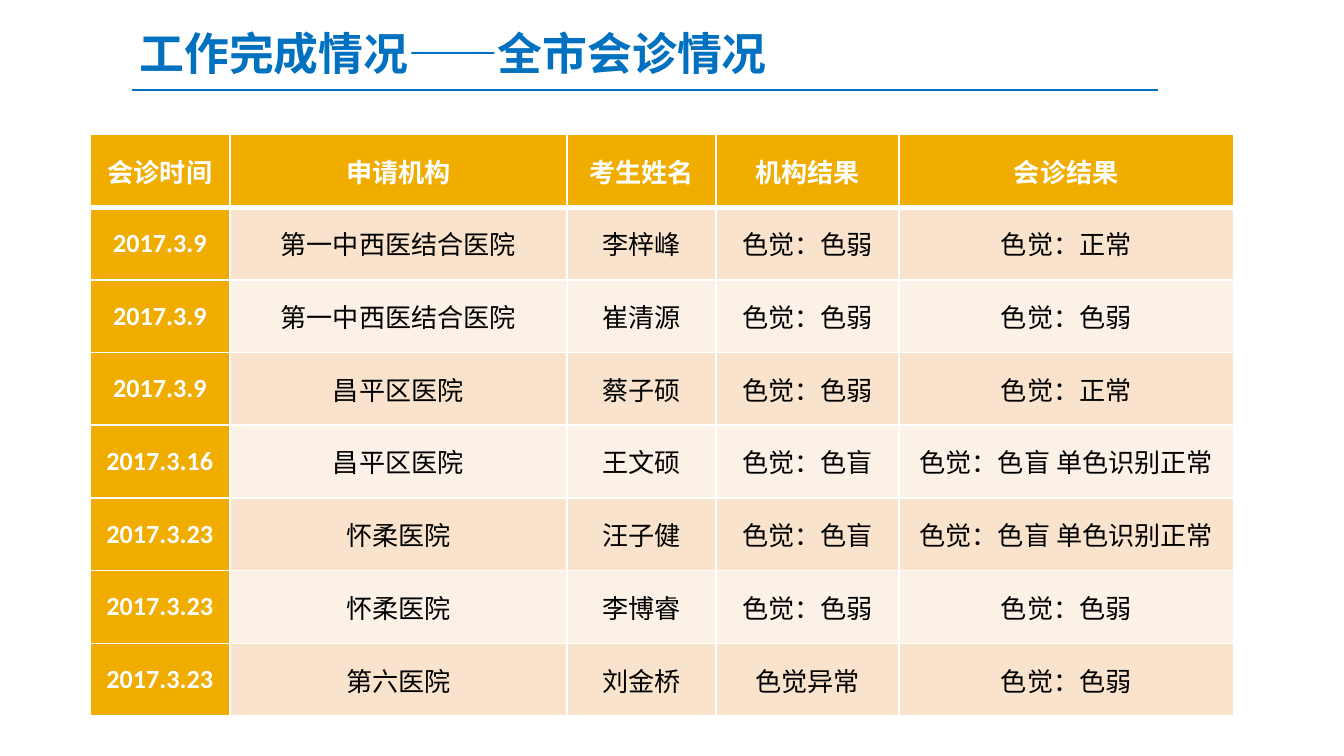
from lxml import etree
from pptx import Presentation
from pptx.dml.color import RGBColor
from pptx.enum.shapes import MSO_CONNECTOR
from pptx.enum.text import MSO_ANCHOR, MSO_AUTO_SIZE, PP_ALIGN
from pptx.oxml.ns import qn
from pptx.util import Inches, Pt

STRAIGHT = MSO_CONNECTOR.STRAIGHT
MIDDLE = MSO_ANCHOR.MIDDLE
CENTER = PP_ALIGN.CENTER
GROW = MSO_AUTO_SIZE.SHAPE_TO_FIT_TEXT

BLUE, GOLD, WHITE, BLACK = "0070C0", "F0AD00", "FFFFFF", "000000"
BANDS = ["F9E3CC", "FCF1E7"]
TITLE_FONT, TABLE_FONT = "Noto Sans CJK SC", "Calibri"

COLUMN_WIDTHS = [1.04, 2.51, 1.11, 1.36, 2.49]
TABLE_HEIGHT = 4.33
CONSULTATIONS = [
    ["会诊时间", "申请机构", "考生姓名", "机构结果", "会诊结果"],
    ["2017.3.9", "第一中西医结合医院", "李梓峰", "色觉：色弱", "色觉：正常"],
    ["2017.3.9", "第一中西医结合医院", "崔清源", "色觉：色弱", "色觉：色弱"],
    ["2017.3.9", "昌平区医院", "蔡子硕", "色觉：色弱", "色觉：正常"],
    ["2017.3.16", "昌平区医院", "王文硕", "色觉：色盲", "色觉：色盲 单色识别正常"],
    ["2017.3.23", "怀柔医院", "汪子健", "色觉：色盲", "色觉：色盲 单色识别正常"],
    ["2017.3.23", "怀柔医院", "李博睿", "色觉：色弱", "色觉：色弱"],
    ["2017.3.23", "第六医院", "刘金桥", "色觉异常", "色觉：色弱"],
]


def color(value):
    """Turn a hex string into a colour."""
    return RGBColor.from_string(value)


class SlideBuilder:
    """Holds the style and the current slide."""

    def __init__(self, slide):
        """Start on a slide."""
        self.slide = slide

    def run(self, paragraph, text, size, font, fill, bold):
        """Add one styled run."""
        run = paragraph.add_run()
        run.text = text
        run.font.size = Pt(size)
        run.font.name = font
        run.font.bold = bold
        run.font.color.rgb = color(fill)
        return run

    def rule(self, left, right, top):
        """Draw the horizontal line under the title."""
        line = self.slide.shapes.add_connector(
            STRAIGHT, Inches(left), Inches(top), Inches(right), Inches(top))
        line.line.color.rgb = color(BLUE)
        line.line.width = Pt(1.5)
        etree.SubElement(line._element.spPr, qn("a:effectLst"))

    def title(self, text, left, top, width, height):
        """Add the title text."""
        shape = self.slide.shapes.add_textbox(
            Inches(left), Inches(top), Inches(width), Inches(height))
        shape.text_frame.word_wrap = False
        shape.text_frame.auto_size = GROW
        paragraph = shape.text_frame.paragraphs[0]
        paragraph.line_spacing = 1.2
        run = self.run(paragraph, text, 24, TITLE_FONT, BLUE, True)
        east_asian = etree.SubElement(run.font._element, qn("a:ea"))
        east_asian.set("typeface", TITLE_FONT)

    def border(self, cell, side, width):
        """Draw one white cell border."""
        line = etree.SubElement(cell._tc.get_or_add_tcPr(), qn(f"a:ln{side}"))
        line.set("w", str(Pt(width)))
        fill = etree.SubElement(line, qn("a:solidFill"))
        etree.SubElement(fill, qn("a:srgbClr")).set("val", WHITE)

    def cell(self, cell, text, row, column):
        """Fill one table cell according to its place."""
        heading = row == 0 or column == 0
        cell.vertical_anchor = MIDDLE
        cell.margin_left = cell.margin_right = Inches(0.06)
        cell.margin_top = cell.margin_bottom = 0
        widths = {"L": 1, "R": 1, "T": 3 if row == 1 else 1, "B": 3 if row == 0 else 1}
        for side, width in widths.items():
            self.border(cell, side, width)
        cell.fill.solid()
        cell.fill.fore_color.rgb = color(GOLD if heading else BANDS[(row - 1) % 2])
        paragraph = cell.text_frame.paragraphs[0]
        paragraph.alignment = CENTER
        self.run(paragraph, text, 14, TABLE_FONT, WHITE if heading else BLACK, heading)

    def table(self, rows, left, top):
        """Add the table with its column widths and equal rows."""
        table = self.slide.shapes.add_table(
            len(rows), len(COLUMN_WIDTHS), Inches(left), Inches(top),
            Inches(sum(COLUMN_WIDTHS)), Inches(TABLE_HEIGHT)).table
        for column, width in zip(table.columns, COLUMN_WIDTHS):
            column.width = Inches(width)
        for row, texts in enumerate(rows):
            table.rows[row].height = Inches(TABLE_HEIGHT / len(rows))
            for column, text in enumerate(texts):
                self.cell(table.cell(row, column), text, row, column)


def main():
    """Build and save the slide."""
    presentation = Presentation()
    presentation.slide_width = Inches(10)
    presentation.slide_height = Inches(10 * 9 / 16)
    builder = SlideBuilder(presentation.slides.add_slide(presentation.slide_layouts[6]))
    builder.rule(0.98, 8.62, 0.67)
    builder.title("工作完成情况——全市会诊情况", 0.94, 0.06, 4.97, 0.59)
    builder.table(CONSULTATIONS, 0.67, 1)
    presentation.save("out.pptx")


if __name__ == "__main__":
    main()
